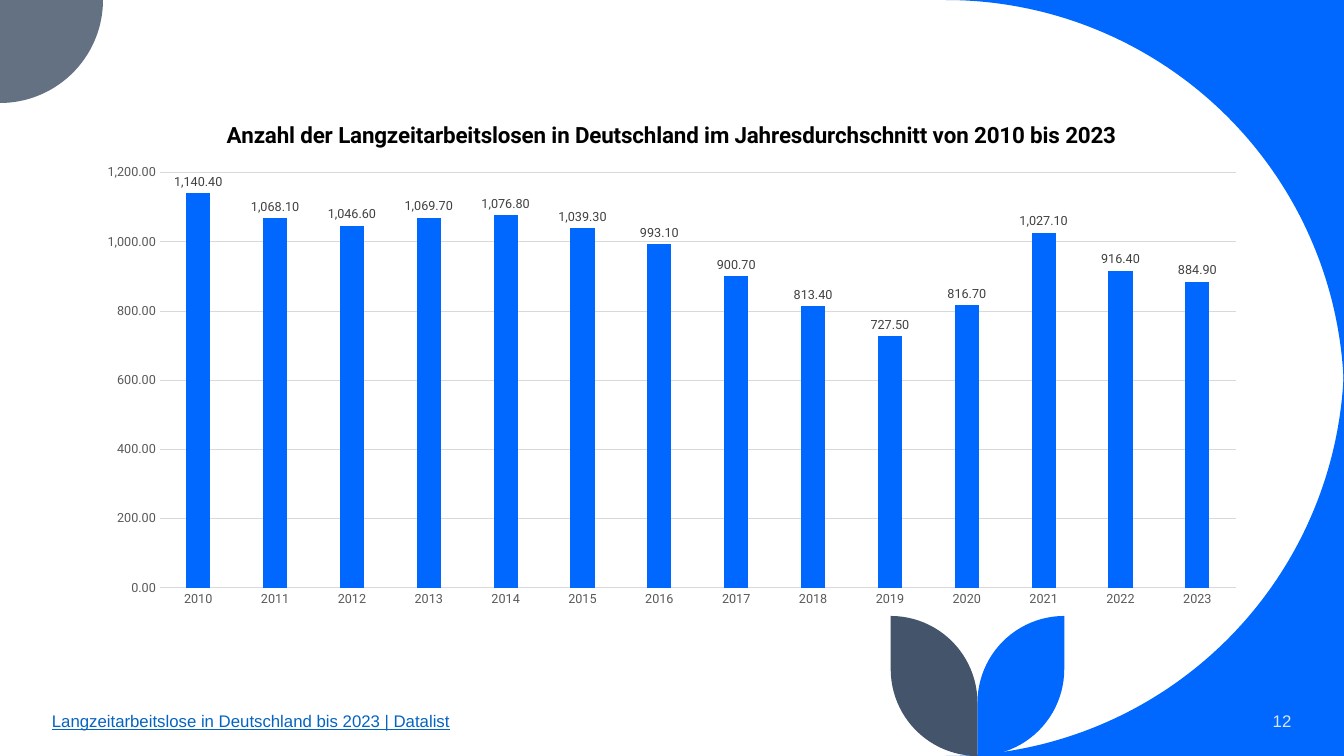
from lxml.etree import Element
from pptx import Presentation
from pptx.chart.data import CategoryChartData as Data
from pptx.dml.color import RGBColor
from pptx.enum.chart import XL_CHART_TYPE as Kind, XL_LABEL_POSITION as Pos, XL_TICK_MARK as Tick
from pptx.enum.text import MSO_ANCHOR as Anchor, PP_ALIGN as Align
from pptx.oxml.ns import qn
from pptx.util import Pt

BLUE = "0068FF"


def rgb(color):
    return RGBColor.from_string(color)


def paint(item, color):
    item.fill.solid()
    item.fill.fore_color.rgb = rgb(color)


deck = Presentation()
deck.slide_width, deck.slide_height = Pt(960), Pt(540)
slide = deck.slides.add_slide(deck.slide_layouts[6])
shapes = slide.shapes

# Curved corners and the two leaves: radius, first arc angle, corners, colour
wide, base, big, small, leaf = 960, 540, 284.4, 73.6, 62
stem, top = 698.2, 440
left, right = stem - leaf, stem + leaf
low, high = base - leaf, top + leaf
forms = [
    (big, 270, [(wide - big, 0), (wide, big), (wide, 0)], BLUE),
    (big, 0, [(wide, base - big), (wide - big, base), (wide, base)], BLUE),
    (small, 0, [(small, 0), (0, small), (0, 0)], "637183"),
    (leaf, 0, [(right, low), (stem, base), (stem, high), (right, top)], BLUE),
    (leaf, 90, [(stem, base), (left, low), (left, top), (stem, high)], "44546A"),
]
for size, start, dots, color in forms:
    spots = [(Pt(x), Pt(y)) for x, y in dots]
    pen = shapes.build_freeform(*spots[0])
    pen.add_line_segments(spots[1:], close=True)
    form = pen.convert_to_shape()
    form.shadow.inherit = False
    paint(form, color)
    form.line.fill.background()
    # Every other side is a clockwise quarter circle
    sides = list(form.element.iter(qn("a:lnTo")))[::2]
    for i, side in enumerate(sides):
        angle = (start + 180 * i) * 60000
        arc = Element(qn("a:arcTo"), wR=str(Pt(size)), hR=str(Pt(size)),
                      stAng=str(angle), swAng="5400000")
        side.getparent().replace(side, arc)

# Source line and slide number
notes = [
    (30, 612, "Langzeitarbeitslose in Deutschland bis 2023 | Datalist", "0563C1", Align.LEFT, True),
    (799.2, 130.3, "12", "DAE5EF", Align.RIGHT, False),
]
for x, width, words, color, align, under in notes:
    frame = shapes.add_textbox(Pt(x), Pt(500.4), Pt(width), Pt(28.8)).text_frame
    frame.word_wrap = True
    frame.vertical_anchor = Anchor.MIDDLE
    para = frame.paragraphs[0]
    para.alignment = align
    para.space_after = Pt(6)
    run = para.add_run()
    run.text = words
    run.font.name, run.font.size = "Arial", Pt(12)
    run.font.underline = under
    run.font.color.rgb = rgb(color)

# Column chart
data = Data(number_format="#,##0.00")
data.categories = [str(year) for year in range(2010, 2024)]
data.add_series("Series 1", [1140.4, 1068.1, 1046.6, 1069.7, 1076.8, 1039.3, 993.1,
                             900.7, 813.4, 727.5, 816.7, 1027.1, 916.4, 884.9])
chart = shapes.add_chart(Kind.COLUMN_CLUSTERED, Pt(60), Pt(72), Pt(839.5), Pt(368.6), data).chart
chart.has_legend = False
chart.font.name, chart.font.size = "Roboto", Pt(10)

# Chart title
chart.has_title = True
chart.chart_title.include_in_layout = False
run = chart.chart_title.text_frame.paragraphs[0].add_run()
run.text = "Anzahl der Langzeitarbeitslosen in Deutschland im Jahresdurchschnitt von 2010 bis 2023"
run.font.name, run.font.size, run.font.bold = "Roboto", Pt(16), True
run.font.color.rgb = rgb("000000")

# Columns and their labels
plot = chart.plots[0]
plot.vary_by_categories = False
plot.gap_width, plot.overlap = 219, -27
bars = plot.series[0]
paint(bars.format, BLUE)
tags = bars.data_labels
tags.show_value = True
tags.position = Pos.OUTSIDE_END
tags.number_format, tags.number_format_is_linked = "#,##0.00", False

# Axes and grid
years, count = chart.category_axis, chart.value_axis
count.minimum_scale, count.maximum_scale, count.major_unit = 0, 1200, 200
count.tick_labels.number_format = "#,##0.00"
count.tick_labels.number_format_is_linked = False
count.format.line.fill.background()
for axis in (years, count):
    axis.major_tick_mark = axis.minor_tick_mark = Tick.NONE
for line in (years.format.line, count.major_gridlines.format.line):
    line.width = Pt(0.75)
    line.color.rgb = rgb("D9D9D9")
for font, color in ((years.tick_labels.font, "595959"), (count.tick_labels.font, "595959"),
                    (tags.font, "404040")):
    font.name, font.size = "Roboto", Pt(9)
    font.color.rgb = rgb(color)

deck.save("out.pptx")
